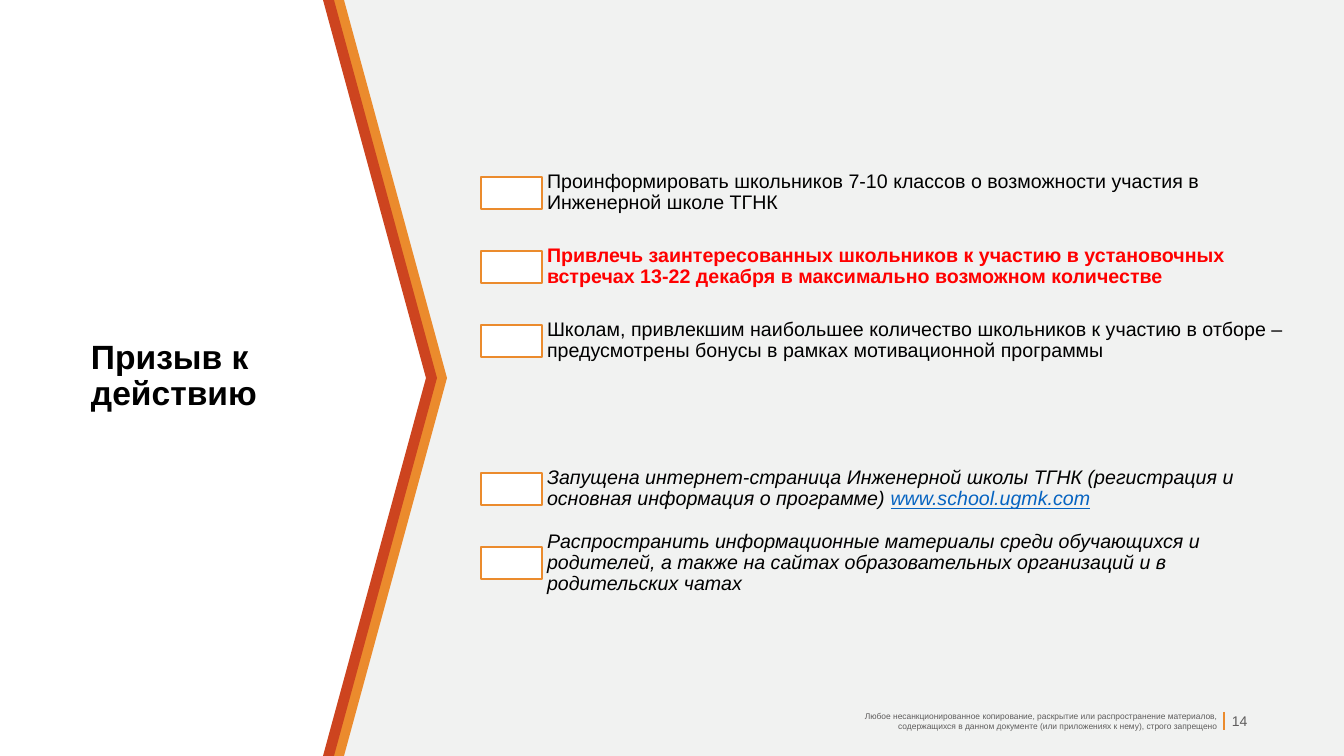
from dataclasses import dataclass

from lxml.etree import SubElement
from pptx import Presentation
from pptx.dml.color import RGBColor
from pptx.enum.shapes import MSO_CONNECTOR, MSO_SHAPE
from pptx.enum.text import MSO_ANCHOR, MSO_AUTO_SIZE, PP_ALIGN
from pptx.oxml.ns import qn
from pptx.util import Pt

SLIDE_WIDTH, SLIDE_HEIGHT = 1344, 756
EMU_PER_PX = 12192000 / SLIDE_WIDTH


@dataclass(frozen=True)
class Theme:
    font: str = "Arial"
    white: str = "FFFFFF"
    panel: str = "F1F2F1"
    orange: str = "EB8B2D"
    red_stripe: str = "CD441F"
    text: str = "000000"
    accent_text: str = "FF0000"
    link: str = "0563C1"
    footer: str = "5E5C5C"
    title_size: int = 24
    body_size: int = 14
    number_size: int = 10
    notice_size: int = 6
    line_width: int = 1


THEME = Theme()

# Each action: its row in the list, then its runs as (text, format)
ACTIONS = [
    (0, [("Проинформировать школьников 7-10 классов о возможности участия в "
          "Инженерной школе ТГНК", {})]),
    (1, [("Привлечь заинтересованных школьников к участию в установочных встречах "
          "13-22 декабря в максимально возможном количестве",
          {"bold": True, "color": THEME.accent_text})]),
    (2, [("Школам, привлекшим наибольшее количество школьников к участию в отборе – "
          "предусмотрены бонусы в рамках мотивационной программы", {})]),
    (4, [("Запущена интернет-страница Инженерной школы ТГНК (регистрация и основная "
          "информация о программе) ", {"italic": True}),
         ("www.school.ugmk.com",
          {"italic": True, "underline": True, "color": THEME.link})]),
    (5, [("Распространить информационные материалы среди обучающихся и родителей, "
          "а также на сайтах образовательных организаций и в родительских чатах",
          {"italic": True})]),
]
NOTICE = ("Любое несанкционированное копирование, раскрытие или распространение материалов, "
          "содержащихся в данном документе (или приложениях к нему), строго запрещено")


def px(length):
    return round(length * EMU_PER_PX)


def place(box):
    return [px(length) for length in box]


def write_text(shape, runs, size=THEME.body_size, color=THEME.text, align=PP_ALIGN.LEFT,
               anchor=MSO_ANCHOR.TOP, inset=0, line_spacing=None):
    """Write one paragraph; runs is a string or a list of (text, format)."""
    frame = shape.text_frame
    frame.word_wrap = True
    frame.auto_size = MSO_AUTO_SIZE.NONE
    frame.vertical_anchor = anchor
    frame.margin_left = frame.margin_right = px(inset)
    frame.margin_top = frame.margin_bottom = px(inset)
    paragraph = frame.paragraphs[0]
    paragraph.alignment = align
    paragraph.line_spacing = line_spacing
    for text, style in [(runs, {})] if isinstance(runs, str) else runs:
        run = paragraph.add_run()
        run.text = text
        font = run.font
        font.name, font.size = THEME.font, Pt(size)
        font.bold = style.get("bold", False)
        font.italic = style.get("italic", False)
        font.underline = style.get("underline", False)
        font.color.rgb = RGBColor.from_string(style.get("color", color))


def paint(shape, fill, line=None):
    shape.shadow.inherit = False
    shape.fill.solid()
    shape.fill.fore_color.rgb = RGBColor.from_string(fill)
    if line:
        shape.line.color.rgb = RGBColor.from_string(line)
        shape.line.width = Pt(THEME.line_width)
    else:
        shape.line.fill.background()


def add_backdrop(slide, box):
    """Grey panel with a notched left side, edged by two chevrons."""
    left, top, width, height = box
    stripe_width, stripe_step, notch = 114, 10, 103
    panel_left = left + 2 * stripe_step
    right, bottom = left + width, top + height

    builder = slide.shapes.build_freeform(panel_left, top, scale=EMU_PER_PX)
    builder.add_line_segments([(right, top), (right, bottom), (panel_left, bottom),
                               (panel_left + notch, top + height // 2)])
    paint(builder.convert_to_shape(), THEME.panel)

    for offset, color in [(stripe_step, THEME.orange), (0, THEME.red_stripe)]:
        stripe = slide.shapes.add_shape(
            MSO_SHAPE.CHEVRON, *place((left + offset, top, stripe_width, height)))
        stripe.adjustments[0] = notch / stripe_width
        paint(stripe, color)


def add_title(slide, box):
    title = slide.shapes.title
    title.left, title.top, title.width, title.height = place(box)
    write_text(title, [("Призыв к действию", {"bold": True})],
               size=THEME.title_size, line_spacing=0.9)


def add_actions(slide, box):
    """Rows of equal height, each with a marker and its text."""
    left, top, width, height = box
    row_height = height // 6
    marker_width, marker_height, text_offset = 61, 32, 57
    for row, runs in ACTIONS:
        row_top = top + row * row_height
        marker_top = row_top + (row_height - marker_height) // 2
        marker = slide.shapes.add_shape(
            MSO_SHAPE.RECTANGLE, *place((left, marker_top, marker_width, marker_height)))
        paint(marker, THEME.white, THEME.orange)
        label = slide.shapes.add_textbox(
            *place((left + text_offset, row_top, width - text_offset, row_height)))
        write_text(label, runs, anchor=MSO_ANCHOR.MIDDLE, inset=9, line_spacing=0.9)


def add_footer(slide, box):
    """Copying notice, separator and slide number."""
    left, top, width, height = box
    notice_width, separator_offset, number_offset = 382, 389, 397

    separator_x = px(left + separator_offset)
    separator = slide.shapes.add_connector(
        MSO_CONNECTOR.STRAIGHT, separator_x, px(top + 1), separator_x, px(top + height - 1))
    separator.line.color.rgb = RGBColor.from_string(THEME.orange)
    separator.line.width = Pt(THEME.line_width)
    SubElement(separator.line._get_or_add_ln().getparent(), qn("a:effectLst"))

    number = slide.shapes.add_textbox(
        *place((left + number_offset, top, width - number_offset, height)))
    write_text(number, "14", size=THEME.number_size, color=THEME.footer,
               anchor=MSO_ANCHOR.MIDDLE)
    notice = slide.shapes.add_textbox(*place((left, top, notice_width, height)))
    write_text(notice, NOTICE, size=THEME.notice_size, color=THEME.footer,
               align=PP_ALIGN.RIGHT)


def main():
    presentation = Presentation()
    presentation.slide_width = px(SLIDE_WIDTH)
    presentation.slide_height = px(SLIDE_HEIGHT)
    slide = presentation.slides.add_slide(presentation.slide_layouts[5])
    slide.background.fill.solid()
    slide.background.fill.fore_color.rgb = RGBColor.from_string(THEME.white)

    add_backdrop(slide, (323, 0, SLIDE_WIDTH - 323, SLIDE_HEIGHT))
    add_title(slide, (91, 340, 223, 74))
    add_actions(slide, (481, 156, 829, 444))
    add_footer(slide, (835, 711, 421, 20))
    presentation.save("out.pptx")


if __name__ == "__main__":
    main()
